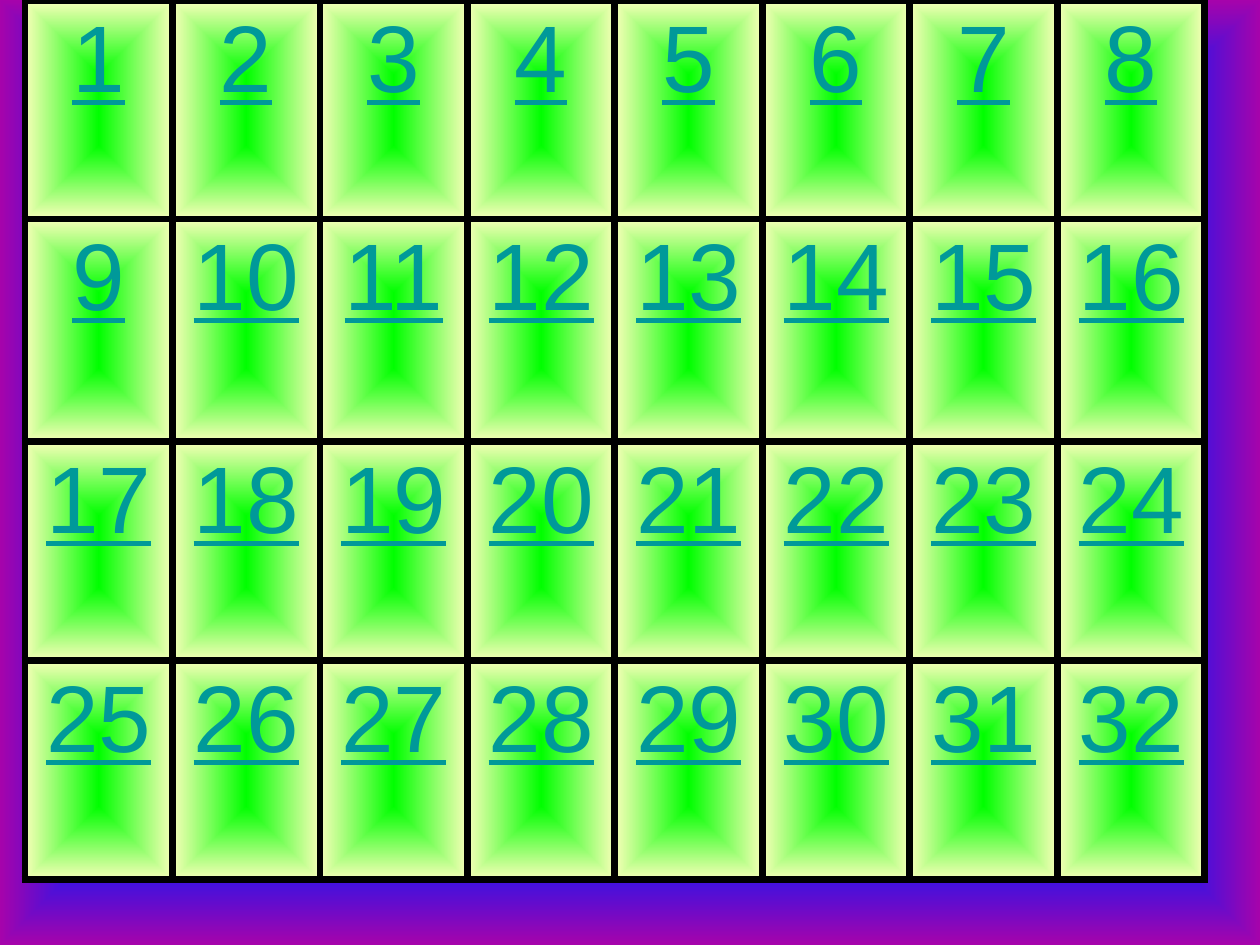
"""Build a slide with a numbered board of 32 green tiles."""
import pptx
import pptx.dml.color
import pptx.enum.text
import pptx.oxml
import pptx.oxml.ns
import pptx.util

RGBColor = pptx.dml.color.RGBColor
BLACK = RGBColor(0x00, 0x00, 0x00)
TEAL = RGBColor(0x00, 0x99, 0x99)
GREEN = RGBColor(0x00, 0xFF, 0x00)
CREAM = RGBColor(0xF7, 0xFE, 0xB8)
PURPLE = RGBColor(0xA6, 0x03, 0xAB)
PINK = RGBColor(0xE8, 0x17, 0x66)
ORANGE = RGBColor(0xEE, 0x3F, 0x17)
YELLOW = RGBColor(0xFF, 0xFF, 0x00)
FOREST = RGBColor(0x1A, 0x8D, 0x48)
BLUE = RGBColor(0x08, 0x19, 0xFB)

NS = pptx.oxml.ns.nsdecls("a", "p")
PX = 914400 / 126
COLS = 8
ROW_HEIGHTS = [218, 223, 219, 219]
RAINBOW = [(0, PURPLE), (12, PINK), (27, ORANGE), (48, YELLOW),
           (65, FOREST), (79, BLUE), (100, PURPLE)]
TILE = [(0, GREEN), (100, CREAM)]
FONT = {"name": "Arial", "size": pptx.util.Pt(54), "underline": True}


def px(n):
    return pptx.util.Emu(round(n * PX))


def gradient(stops):
    gs = "".join(f'<a:gs pos="{pos * 1000}"><a:srgbClr val="{color}"/></a:gs>'
                 for pos, color in stops)
    return (f'<a:gradFill {NS} rotWithShape="1"><a:gsLst>{gs}</a:gsLst>'
            '<a:path path="shape"><a:fillToRect l="50000" t="50000" r="50000" b="50000"/>'
            '</a:path></a:gradFill>')


prs = pptx.Presentation()
prs.slide_width, prs.slide_height = px(1260), px(945)
s = prs.slides.add_slide(prs.slide_layouts[6])
s.element.cSld.insert(0, pptx.oxml.parse_xml(
    f'<p:bg {NS}><p:bgPr>{gradient(RAINBOW)}<a:effectLst/></p:bgPr></p:bg>'))

board = s.shapes.add_table(len(ROW_HEIGHTS), COLS, px(25), px(1),
                           px(1180), px(sum(ROW_HEIGHTS))).table
board.first_row = board.horz_banding = False
for row, height in zip(board.rows, ROW_HEIGHTS):
    row.height = px(height)

for number, cell in enumerate(board.iter_cells(), 1):
    tcPr = cell._tc.get_or_add_tcPr()
    for side in "LRTB":
        tcPr.append(pptx.oxml.parse_xml(
            f'<a:ln{side} {NS} w="{pptx.util.Pt(4.5)}"><a:solidFill>'
            f'<a:srgbClr val="{BLACK}"/></a:solidFill></a:ln{side}>'))
    tcPr.append(pptx.oxml.parse_xml(gradient(TILE)))
    p = cell.text_frame.paragraphs[0]
    p.alignment = pptx.enum.text.PP_ALIGN.CENTER
    p._p.get_or_add_pPr().append(pptx.oxml.parse_xml(
        f'<a:spcBef {NS}><a:spcPct val="20000"/></a:spcBef>'))
    r = p.add_run()
    r.text = str(number)
    for name, value in FONT.items():
        setattr(r.font, name, value)
    r.font.color.rgb = TEAL

prs.save("out.pptx")
